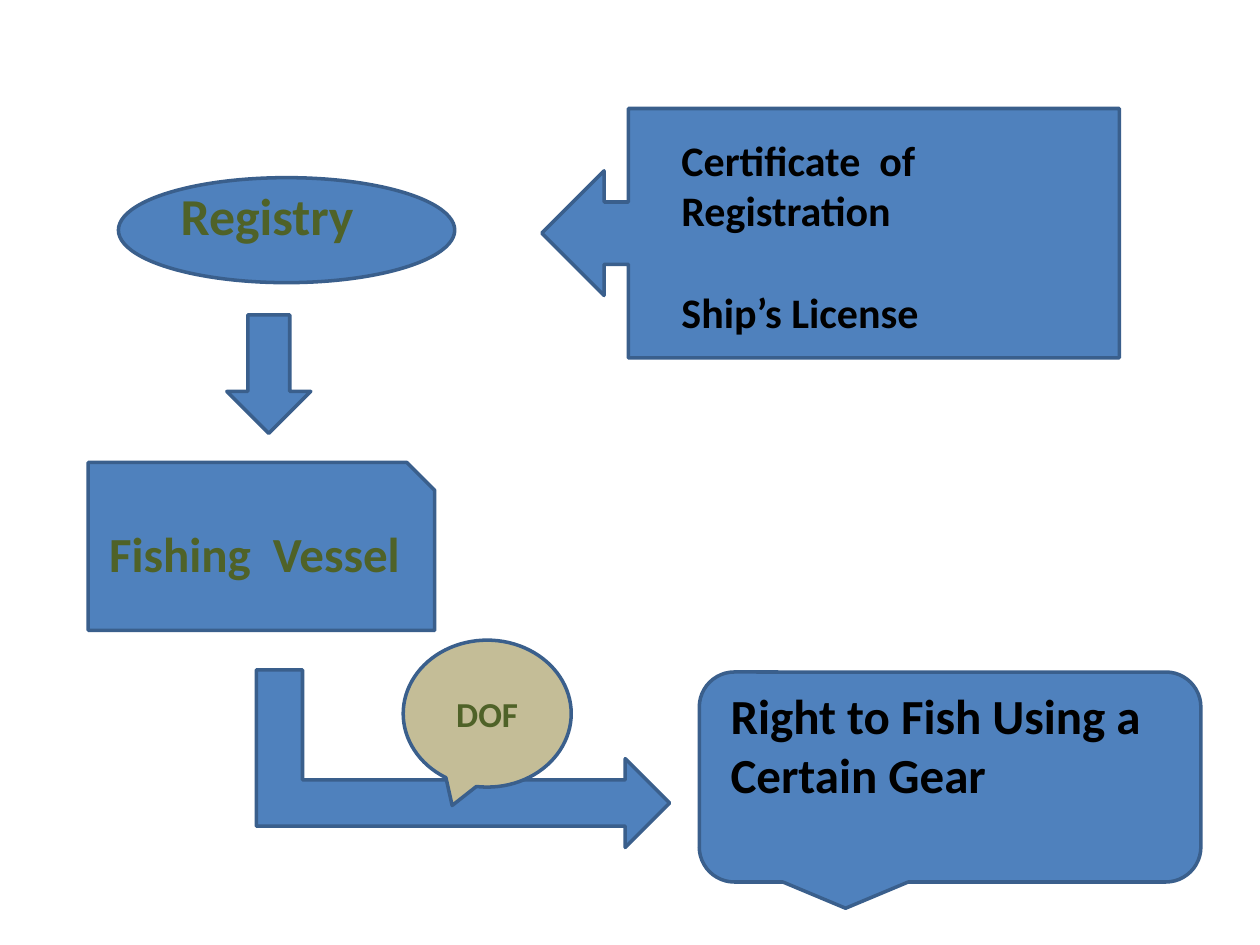
from dataclasses import dataclass
from typing import Optional

from lxml import etree
from pptx import Presentation
from pptx.dml.color import RGBColor
from pptx.enum import shapes, text
from pptx.oxml import ns
from pptx.util import Pt

BLUE = RGBColor(0x4F, 0x81, 0xBD)
OUTLINE = RGBColor(0x3A, 0x5F, 0x8C)
TAN = RGBColor(0xC4, 0xBD, 0x97)
OLIVE = RGBColor(0x4F, 0x62, 0x28)
BLACK = RGBColor(0, 0, 0)

Kind = shapes.MSO_SHAPE


@dataclass(frozen=True)
class Area:
    left: float
    top: float
    width: float
    height: float

    def lengths(self) -> tuple:
        return Pt(self.left), Pt(self.top), Pt(self.width), Pt(self.height)


@dataclass(frozen=True)
class Figure:
    kind: Kind
    area: Area
    label: Optional[str] = None
    size: float = 20
    fill: RGBColor = BLUE
    adjustments: tuple = ()
    rotation: float = 0


@dataclass(frozen=True)
class Caption:
    area: Area
    lines: tuple
    size: float
    gap: float = 0


REGISTRY = Figure(Kind.OVAL, Area(67.7, 101.5, 192.2, 60))
REGISTRY_LABEL = Area(96, 101.5, 120, 66)

CERTIFICATES = Figure(Kind.LEFT_ARROW_CALLOUT, Area(309.6, 62, 330, 142.5),
                      adjustments=(0.25, 0.25, 0.25, 0.85))
CERTIFICATES_TEXT = Caption(Area(382.3, 73.4, 224.6, 124),
                            ("Certificate  of Registration", "Ship’s License"), 24, gap=29.3)

VESSEL = Figure(Kind.SNIP_1_RECTANGLE, Area(50.4, 264.2, 198, 96), "Fishing  Vessel", 28)
DOWN_ARROW = Figure(Kind.DOWN_ARROW, Area(129.6, 180, 48, 67.7))

RIGHT_TO_FISH = Figure(Kind.ROUNDED_RECTANGULAR_CALLOUT, Area(399.6, 384, 286.6, 120))
RIGHT_TO_FISH_TEXT = Caption(Area(410.4, 388, 257.8, 108.7),
                             ("Right to Fish Using a Certain Gear",), 28)

BENT_ARROW = Figure(Kind.BENT_UP_ARROW, Area(213.8, 315.4, 101.5, 236.2),
                    adjustments=(0.26, 0.25, 0.25), rotation=90)
DOF = Figure(Kind.OVAL_CALLOUT, Area(230.4, 365.8, 96, 84), "DOF", fill=TAN)


def set_font(para, size: float, color: RGBColor) -> None:
    font = para.font
    font.name = "Calibri"
    font.size = Pt(size)
    font.bold = True
    font.color.rgb = color


def draw_figure(page, figure: Figure) -> None:
    shape = page.shapes.add_shape(figure.kind, *figure.area.lengths())
    shape.shadow.inherit = False
    shape.rotation = figure.rotation
    shape.fill.solid()
    shape.fill.fore_color.rgb = figure.fill
    shape.line.color.rgb = OUTLINE
    shape.line.width = Pt(2)
    for index, value in enumerate(figure.adjustments):
        shape.adjustments[index] = value
    if figure.label:
        frame = shape.text_frame
        frame.text = figure.label
        frame.vertical_anchor = text.MSO_ANCHOR.MIDDLE
        para = frame.paragraphs[0]
        para.alignment = text.PP_ALIGN.CENTER
        set_font(para, figure.size, OLIVE)


def draw_caption(page, caption: Caption) -> None:
    frame = page.shapes.add_textbox(*caption.area.lengths()).text_frame
    frame.word_wrap = True
    frame.text = "\n".join(caption.lines)
    for para in frame.paragraphs:
        set_font(para, caption.size, BLACK)
    for para in frame.paragraphs[1:]:
        para.space_before = Pt(caption.gap)


def fill_registry_label(page) -> None:
    body = page.placeholders[1]
    body.left, body.top, body.width, body.height = REGISTRY_LABEL.lengths()
    frame = body.text_frame
    frame.text = "Registry"
    frame.auto_size = text.MSO_AUTO_SIZE.NONE
    para = frame.paragraphs[0]
    set_font(para, 29.6, OLIVE)
    properties = para._p.get_or_add_pPr()
    properties.set("marL", str(Pt(27)))
    properties.set("indent", str(Pt(-27)))
    bullet = etree.Element(ns.qn("a:buNone"))
    properties.find(ns.qn("a:defRPr")).addprevious(bullet)
    page.shapes.element.append(body.element)


def main() -> None:
    deck = Presentation()
    deck.slide_width, deck.slide_height = Pt(720), Pt(540)
    page = deck.slides.add_slide(deck.slide_layouts[1])
    title = page.shapes.title.element
    title.getparent().remove(title)

    draw_figure(page, REGISTRY)
    fill_registry_label(page)
    draw_figure(page, CERTIFICATES)
    draw_caption(page, CERTIFICATES_TEXT)
    for figure in (VESSEL, DOWN_ARROW, RIGHT_TO_FISH):
        draw_figure(page, figure)
    draw_caption(page, RIGHT_TO_FISH_TEXT)
    for figure in (BENT_ARROW, DOF):
        draw_figure(page, figure)
    deck.save("out.pptx")


if __name__ == "__main__":
    main()
